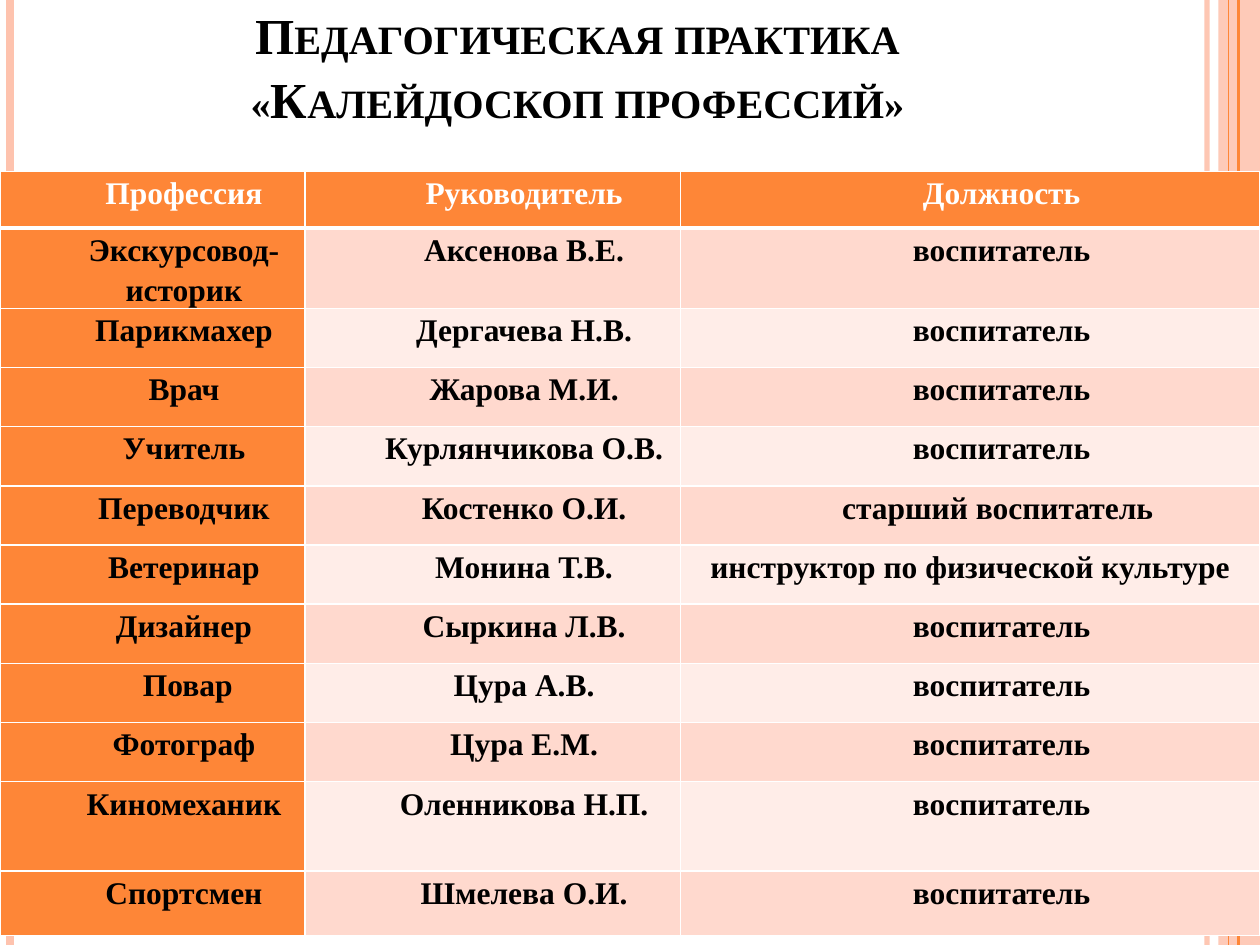
from lxml import etree
from pptx import Presentation
from pptx.dml.color import RGBColor
from pptx.enum import shapes, text
from pptx.oxml import ns
from pptx.util import Inches, Pt

FONT = "Times New Roman"
COLORS = {"accent": "FE8637", "stripe": "FEC3AE", "odd": "FFD9CE",
          "even": "FFEDE8", "white": "FFFFFF", "black": "000000"}
TITLE = "Педагогическая практика\v«Калейдоскоп профессий»"
HEADER = ("Профессия", "Руководитель", "Должность")
TEACHER = "воспитатель"
SPORT = "инструктор по физической культуре"
STAFF = [
    ("Экскурсовод-историк", "Аксенова В.Е.", TEACHER),
    ("Парикмахер", "Дергачева Н.В.", TEACHER),
    ("Врач", "Жарова М.И.", TEACHER),
    ("Учитель", "Курлянчикова О.В.", TEACHER),
    ("Переводчик", "Костенко О.И.", "старший воспитатель "),
    ("Ветеринар", "Монина Т.В.", SPORT),
    ("Дизайнер", "Сыркина Л.В.", TEACHER),
    (" Повар", "Цура А.В.", TEACHER),
    ("Фотограф", "Цура Е.М.", TEACHER),
    ("Киномеханик", "Оленникова Н.П.", TEACHER),
    ("Спортсмен", "Шмелева О.И.", TEACHER),
]
COL_WIDTHS = (2.42, 2.98, 4.6)
ROW_HEIGHTS = [0.45] + [0.47] * 9 + [0.71, 0.51]
BAND = (9.67, 0.33, "stripe", 87)
STRIPES = [(9.58, "stripe", 3, 93), (0.08, "stripe", 4.5, 100),
           (9.83, "accent", 1.5, 100), (9.75, "accent", 0.75, 100)]


def rgb(name):
    return RGBColor.from_string(COLORS[name])


def set_alpha(sp, percent):
    clr = sp._element.spPr.find(".//" + ns.qn("a:srgbClr"))
    etree.SubElement(clr, ns.qn("a:alpha"), val=str(percent * 1000))


def style_font(p, size, color):
    p.alignment = text.PP_ALIGN.CENTER
    p.font.name, p.font.size, p.font.bold = FONT, Pt(size), True
    p.font.color.rgb = rgb(color)


def add_band(slide, left, width, color, alpha):
    sp = slide.shapes.add_shape(shapes.MSO_SHAPE.RECTANGLE, Inches(left), 0,
                                Inches(width), Inches(7.5))
    sp.shadow.inherit = False
    sp.fill.solid()
    sp.fill.fore_color.rgb = rgb(color)
    sp.line.fill.background()
    set_alpha(sp, alpha)


def add_stripe(slide, x, color, width, alpha):
    line = slide.shapes.add_connector(shapes.MSO_CONNECTOR.STRAIGHT,
                                      Inches(x), 0, Inches(x), Inches(7.5))
    line.line.color.rgb = rgb(color)
    line.line.width = Pt(width)
    if alpha < 100:
        set_alpha(line, alpha)
    etree.SubElement(line._element.spPr, ns.qn("a:effectLst"))


def add_borders(cell, row):
    tc_pr = cell._tc.get_or_add_tcPr()
    widths = {"L": 1, "R": 1, "T": 3 if row == 1 else 1, "B": 3 if row == 0 else 1}
    for side, width in widths.items():
        ln = etree.SubElement(tc_pr, ns.qn("a:ln" + side), w=str(Pt(width)))
        fill = etree.SubElement(ln, ns.qn("a:solidFill"))
        etree.SubElement(fill, ns.qn("a:srgbClr"), val=COLORS["white"])


def fill_cell(cell, row, col, value):
    add_borders(cell, row)
    cell.fill.solid()
    cell.fill.fore_color.rgb = rgb("accent" if row == 0 or col == 0
                                   else "odd" if row % 2 else "even")
    cell.margin_left = cell.margin_right = Inches(0.07)
    cell.margin_top = cell.margin_bottom = 0
    p = cell.text_frame.paragraphs[0]
    p.text = value
    p.line_spacing = 1.15
    style_font(p, 18, "black" if row else "white")
    if value != SPORT:
        p._p.get_or_add_pPr().set("marL", str(Inches(0.5)))


def add_title(slide):
    sp = slide.shapes.title
    sp.left, sp.top, sp.width, sp.height = map(Inches, (0.5, 0.3, 8.17, 1.25))
    tf = sp.text_frame
    tf.vertical_anchor = text.MSO_ANCHOR.BOTTOM
    tf.margin_bottom = Inches(0.53)
    p = tf.paragraphs[0]
    p.text = TITLE
    p.line_spacing = 1.05
    style_font(p, 28.8, "black")
    p.font._element.set("cap", "small")


def add_staff_table(slide):
    rows = [HEADER] + STAFF
    table = slide.shapes.add_table(len(rows), len(HEADER), 0, Inches(1.36),
                                   Inches(10), Inches(sum(ROW_HEIGHTS))).table
    for column, width in zip(table.columns, COL_WIDTHS):
        column.width = Inches(width)
    for r, values in enumerate(rows):
        table.rows[r].height = Inches(ROW_HEIGHTS[r])
        for c, value in enumerate(values):
            fill_cell(table.cell(r, c), r, c, value)


def main():
    prs = Presentation()
    prs.slide_width, prs.slide_height = Inches(10), Inches(7.5)
    slide = prs.slides.add_slide(prs.slide_layouts[5])
    add_band(slide, *BAND)
    for stripe in STRIPES:
        add_stripe(slide, *stripe)
    add_title(slide)
    add_staff_table(slide)
    prs.save("out.pptx")


if __name__ == "__main__":
    main()
